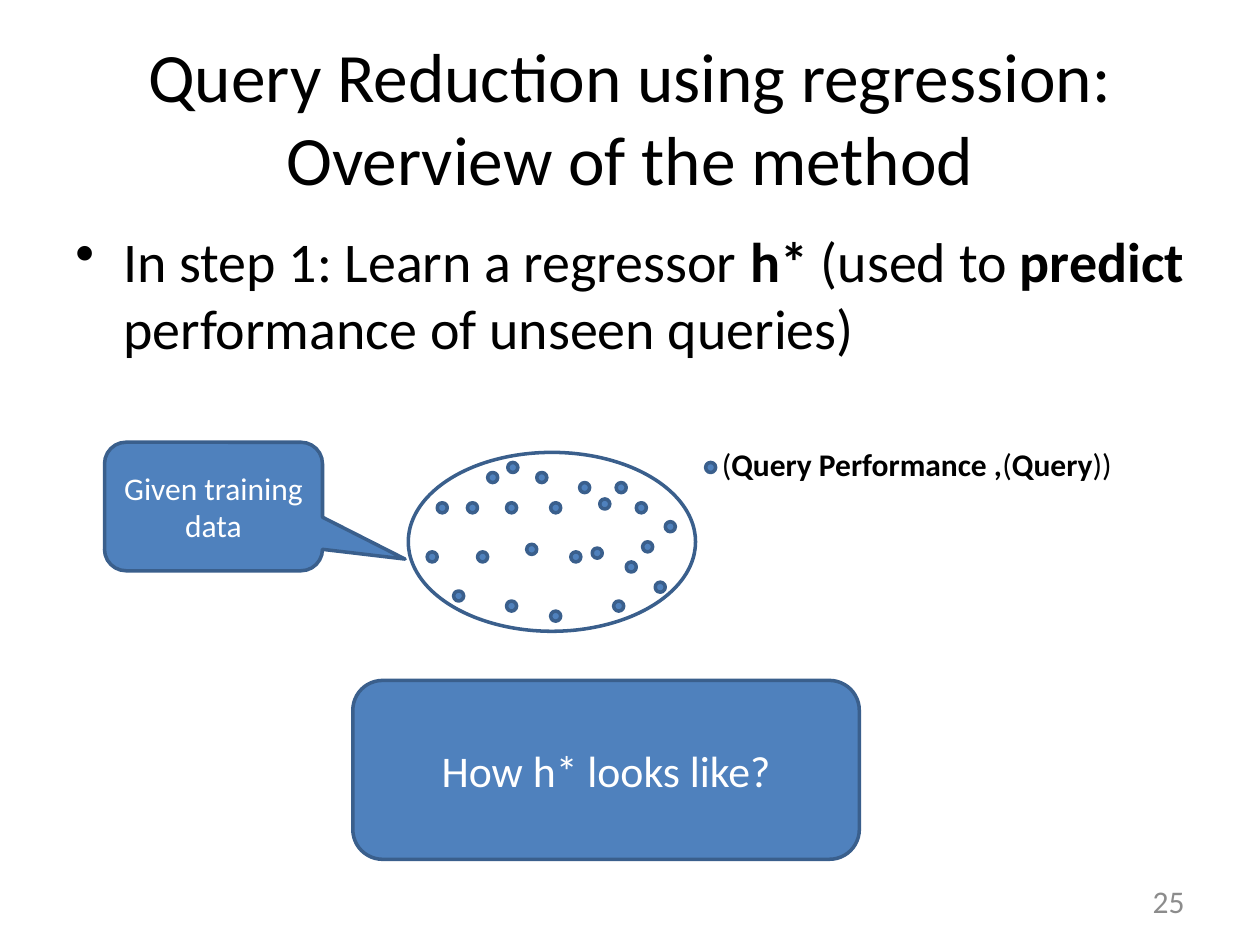
from pptx import Presentation, util as u
from pptx.dml.color import RGBColor
from pptx.enum import shapes, text
from pptx.oxml.xmlchemy import OxmlElement

THEME = dict(
    font="Calibri", ink="000000", white="FFFFFF", grey="8C8C8C",
    blue="4F81BD", edge="3A5F8C", rule=2,
    title=39.6, body=32, ask=25, note=18,
)
KIND = shapes.MSO_SHAPE
ALIGN = text.PP_ALIGN
MID, TOP = text.MSO_ANCHOR.MIDDLE, text.MSO_ANCHOR.TOP

# Each run is (words, bold)
TITLE = [("Query Reduction using regression: Overview of the method", False)]
STEP = [("In step 1: Learn a regressor ", False), ("h* ", True),
        ("(used to ", False), ("predict ", True),
        ("performance of unseen queries)", False)]
LABEL = [("(", False), ("Query Performance ,", True), ("(", False),
         ("Query", True), ("))", False)]

# (box, runs, size, colour, align, anchor)
TEXTS = dict(
    title=((0.5, 0.3, 9, 1.25), TITLE, "title", "ink", ALIGN.CENTER, MID),
    step=((0.5, 1.75, 9, 4.95), STEP, "body", "ink", ALIGN.LEFT, TOP),
    page=((7.17, 6.95, 2.33, 0.4), [("25", False)], "note", "grey",
          ALIGN.RIGHT, MID),
    label=((5.63, 3.48, 3.78, 0.4), LABEL, "note", "ink", ALIGN.LEFT, TOP),
)

ASK = (2.8, 5.4, 4.02, 1.42)
CLOUD = (3.24, 3.59, 2.28, 1.42)
GIVEN = (0.83, 3.51, 1.73, 1.02)
TAIL = (0.879, 0.409, 0.167)

# Training points: top edge -> left edges
DOT = 0.08
ROWS = {
    3.67: [4.03, 5.6],  # the second one is the legend key
    3.75: [3.87, 4.26],
    3.83: [4.6, 4.89],
    3.96: [4.76],
    3.99: [3.47, 3.71, 4.02, 4.37, 5.05],
    4.14: [5.28],
    4.3: [5.1],
    4.32: [4.18],
    4.35: [4.7],
    4.38: [3.39, 3.79, 4.53],
    4.46: [4.97],
    4.62: [5.2],
    4.69: [3.6],
    4.77: [4.02, 4.87],
    4.85: [4.37],
}


def color(key):
    return RGBColor.from_string(THEME[key])


def place(box):
    return [u.Inches(v) for v in box]


def write(shape, runs, size, ink, align, anchor):
    frame = shape.text_frame
    frame.word_wrap = True
    frame.vertical_anchor = anchor
    para = frame.paragraphs[0]
    para.alignment = align
    for words, bold in runs:
        run = para.add_run()
        run.text = words
        form = dict(name=THEME["font"], size=u.Pt(THEME[size]), bold=bold)
        for key, val in form.items():
            setattr(run.font, key, val)
        run.font.color.rgb = color(ink)
    return para


def bullet(para):
    para.space_before = u.Pt(0.2 * THEME["body"])
    props = para._p.get_or_add_pPr()
    props.set("marL", str(u.Inches(0.38)))
    props.set("indent", str(u.Inches(-0.38)))
    mark = OxmlElement("a:buChar")
    mark.set("char", "•")
    props.append(mark)


def draw(slide, kind, box, fill="blue"):
    shape = slide.shapes.add_shape(kind, *place(box))
    shape.shadow.inherit = False
    if fill:
        shape.fill.solid()
        shape.fill.fore_color.rgb = color(fill)
    else:
        shape.fill.background()
    shape.line.color.rgb = color("edge")
    shape.line.width = u.Pt(THEME["rule"])
    return shape


def add_text(slide, name):
    box, *rest = TEXTS[name]
    return write(slide.shapes.add_textbox(*place(box)), *rest)


def main():
    deck = Presentation()
    deck.slide_width, deck.slide_height = u.Inches(10), u.Inches(7.5)
    slide = deck.slides.add_slide(deck.slide_layouts[6])

    add_text(slide, "title")
    bullet(add_text(slide, "step"))
    add_text(slide, "page")

    ask = draw(slide, KIND.ROUNDED_RECTANGLE, ASK)
    write(ask, [("How h* looks like?", False)], "ask", "white",
          ALIGN.CENTER, MID)

    draw(slide, KIND.OVAL, CLOUD, fill=None)
    for top, lefts in ROWS.items():
        for left in lefts:
            draw(slide, KIND.OVAL, (left, top, DOT, DOT))
    add_text(slide, "label")

    given = draw(slide, KIND.ROUNDED_RECTANGULAR_CALLOUT, GIVEN)
    for i, val in enumerate(TAIL):
        given.adjustments[i] = val
    write(given, [("Given training data", False)], "note", "white",
          ALIGN.CENTER, MID)

    deck.save("out.pptx")


if __name__ == "__main__":
    main()
